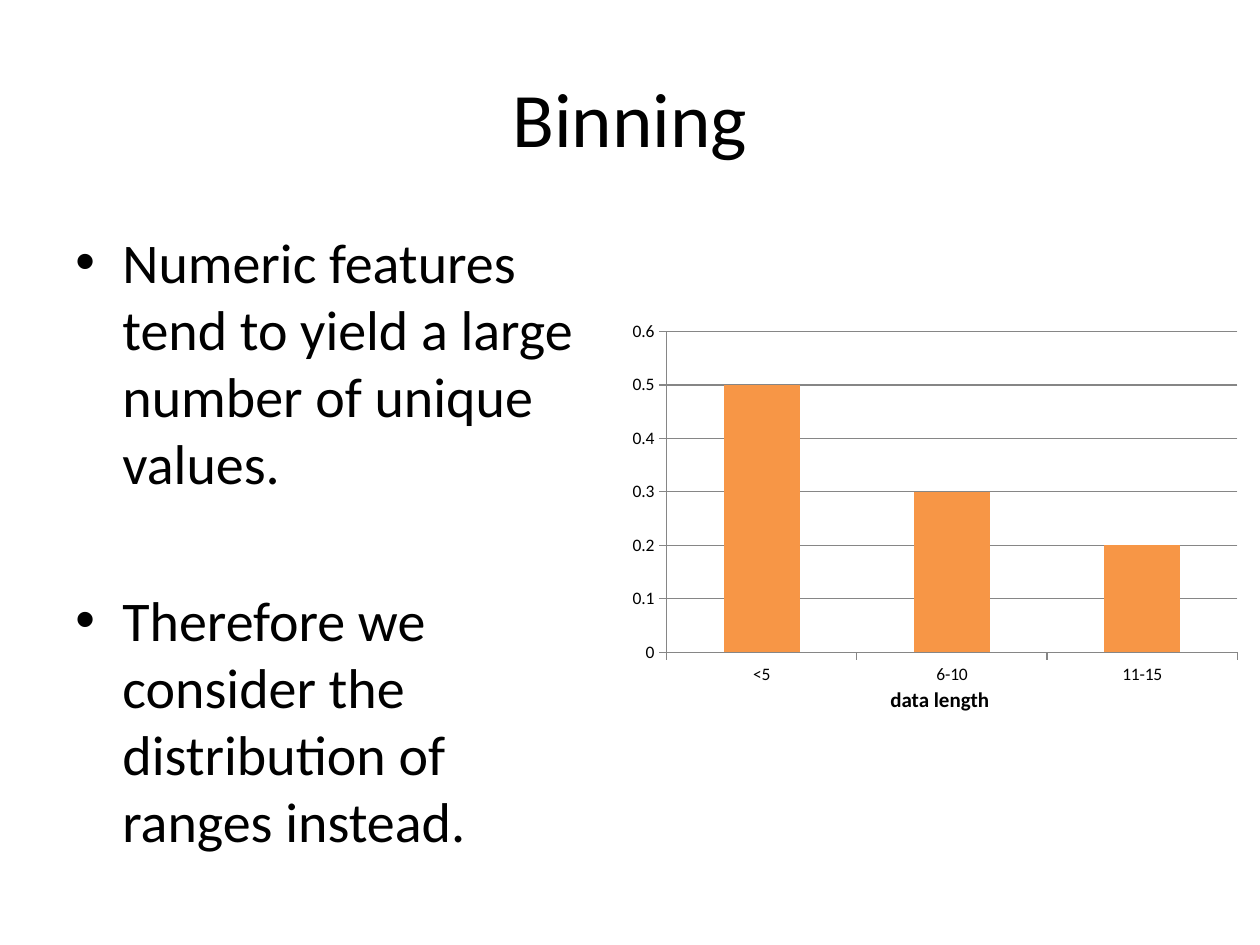
from dataclasses import dataclass

from pptx import Presentation
from pptx.chart.data import CategoryChartData
from pptx.dml.color import RGBColor
from pptx.enum.chart import XL_CHART_TYPE, XL_TICK_MARK
from pptx.enum.text import MSO_ANCHOR, PP_ALIGN
from pptx.oxml.ns import qn
from pptx.util import Emu, Pt


@dataclass(frozen=True)
class Theme:
    font: str = "Calibri"
    ink: RGBColor = RGBColor(0, 0, 0)
    paper: RGBColor = RGBColor(255, 255, 255)
    bar: RGBColor = RGBColor(0xF7, 0x96, 0x46)
    rule: RGBColor = RGBColor(0x86, 0x86, 0x86)
    title: int = 44
    body: int = 32
    label: int = 12
    tick: int = 10


THEME = Theme()


def px(num):
    """Turn px, 126 to the inch, into EMU."""
    return Emu(round(num * 914400 / 126))


def style(font, size, bold=False):
    font.name = THEME.font
    font.size = Pt(size)
    font.bold = bold
    font.color.rgb = THEME.ink


def add_text(slide, box, lines, size, bold=False, wrap=True):
    frame = slide.shapes.add_textbox(*map(px, box)).text_frame
    frame.word_wrap = wrap
    frame.text = "\n".join(lines)
    for para in frame.paragraphs:
        for run in para.runs:
            style(run.font, size, bold)
    return frame


def add_title(slide, box, text):
    frame = add_text(slide, box, [text], THEME.title)
    frame.vertical_anchor = MSO_ANCHOR.MIDDLE
    frame.paragraphs[0].alignment = PP_ALIGN.CENTER


def add_list(slide, box, items, indent=47, gap=51):
    frame = add_text(slide, box, items, THEME.body)
    for num, para in enumerate(frame.paragraphs):
        para.space_before = Pt(gap if num else 0)
        # Hanging bullet
        props = para._p.get_or_add_pPr()
        props.set("marL", str(px(indent)))
        props.set("indent", str(-px(indent)))
        face = props.makeelement(qn("a:buFont"), {"typeface": "Arial"})
        mark = props.makeelement(qn("a:buChar"), {"char": "•"})
        props.extend([face, mark])


def add_bars(slide, box, cats, vals, label):
    left, top, width, height = box
    data = CategoryChartData()
    data.categories = cats
    data.add_series("Series 1", vals)
    chart = slide.shapes.add_chart(
        XL_CHART_TYPE.COLUMN_CLUSTERED, *map(px, box), data
    ).chart
    chart.has_legend = chart.has_title = False
    style(chart.font, THEME.tick)

    # Bars
    plot = chart.plots[0]
    plot.gap_width = 150
    plot.vary_by_categories = False
    fill = plot.series[0].format.fill
    fill.solid()
    fill.fore_color.rgb = THEME.bar

    # Axes and grid
    for axis in (chart.category_axis, chart.value_axis):
        axis.major_tick_mark = XL_TICK_MARK.OUTSIDE
        axis.minor_tick_mark = XL_TICK_MARK.NONE
        axis.format.line.color.rgb = THEME.rule
    scale = chart.value_axis
    scale.minimum_scale, scale.maximum_scale, scale.major_unit = 0, 0.6, 0.1
    scale.has_major_gridlines = True
    scale.major_gridlines.format.line.color.rgb = THEME.rule

    # Label below the categories
    spot = (left + 258, top + height - 12, 126, 38)
    add_text(slide, spot, [label], THEME.label, bold=True, wrap=False)


def main():
    deck = Presentation()
    deck.slide_width, deck.slide_height = px(1260), px(945)
    slide = deck.slides.add_slide(deck.slide_layouts[6])
    back = slide.background.fill
    back.solid()
    back.fore_color.rgb = THEME.paper

    add_title(slide, (63, 38, 1134, 158), "Binning")
    add_list(slide, (63, 221, 547, 624), [
        "Numeric features tend to yield a large number of unique values.",
        "Therefore we consider the distribution of ranges instead.",
    ])
    add_bars(slide, (620, 314, 630, 378), ["<5", "6-10", "11-15"],
             [0.5, 0.3, 0.2], "data length")
    deck.save("out.pptx")


if __name__ == "__main__":
    main()
